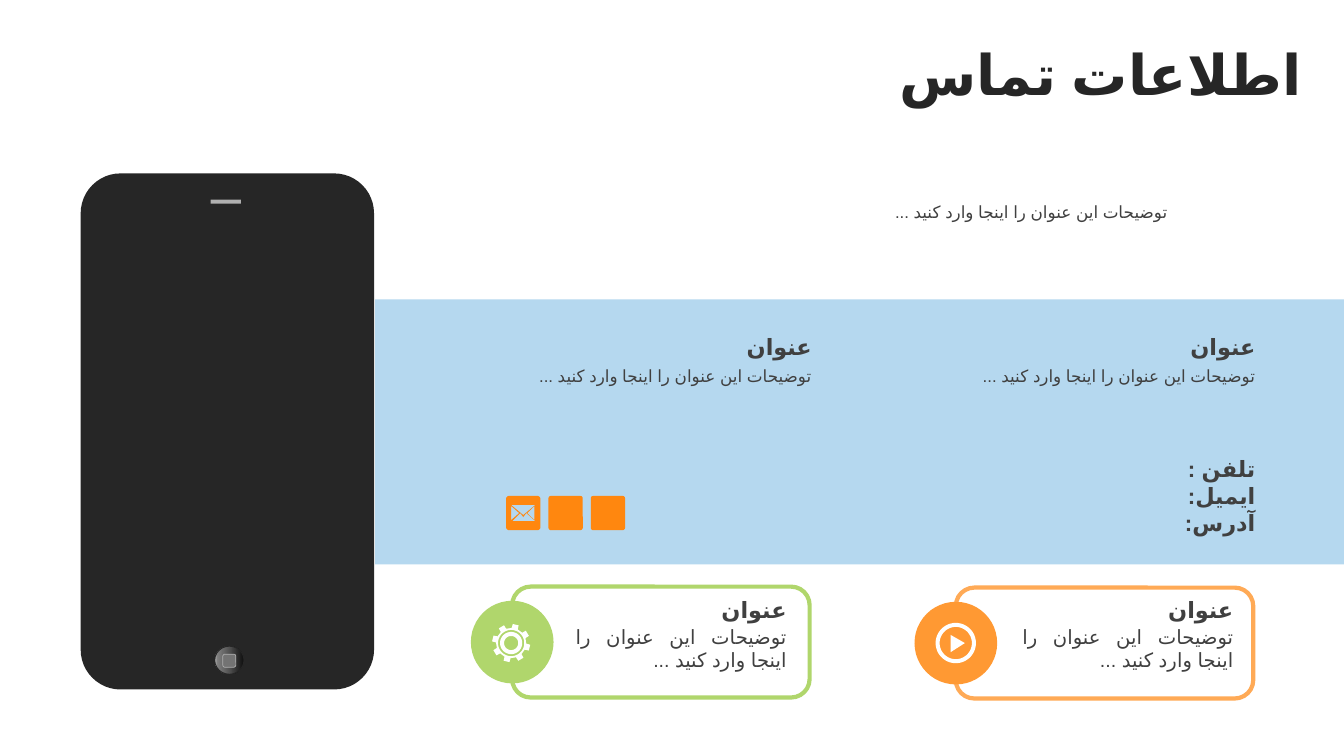
"""Build the Persian contact information slide."""
from dataclasses import dataclass
from math import cos, radians, sin

from lxml import etree
from pptx import Presentation
from pptx.dml.color import RGBColor
from pptx.enum import shapes, text
from pptx.oxml import ns
from pptx.util import Inches, Pt

RECT = shapes.MSO_SHAPE.RECTANGLE
ROUND = shapes.MSO_SHAPE.ROUNDED_RECTANGLE
OVAL = shapes.MSO_SHAPE.OVAL
RIGHT = text.PP_ALIGN.RIGHT
JUSTIFY = text.PP_ALIGN.JUSTIFY
MIDDLE = text.MSO_ANCHOR.MIDDLE
TOP = text.MSO_ANCHOR.TOP

INK, DARK, SILVER, WHITE = "404040", "262626", "B0B0B0", "FFFFFF"
ORANGE, GREEN = "FF870F", "B0D66C"
HEADING = "عنوان"
DETAILS = "توضیحات این عنوان را اینجا وارد کنید ..."


def color(value):
    return RGBColor.from_string(value)


def polar(cx, cy, radius, degrees):
    angle = radians(degrees)
    return cx + radius * cos(angle), cy + radius * sin(angle)


def circle(cx, cy, radius):
    return [polar(cx, cy, radius, a) for a in range(0, 360, 6)]


def gear(cx, cy, root, tip, teeth, turn):
    outline = []
    for tooth in range(teeth):
        middle = turn + tooth * 360 / teeth
        for radius, offset in ((root, -12), (tip, -9), (tip, 9), (root, 12)):
            outline.append(polar(cx, cy, radius, middle + offset))
    return outline


def rounded_square(left, top, side, radius):
    near, far = radius, side - radius
    corners = ((far, far), (near, far), (near, near), (far, near))
    return [polar(left + x, top + y, radius, 90 * quarter + step)
            for quarter, (x, y) in enumerate(corners)
            for step in range(0, 91, 15)]


@dataclass
class Canvas:
    slide: object
    font: str = "Arial"
    language: str = "fa-IR"

    def paint(self, fill, value, alpha=100):
        fill.solid()
        fill.fore_color.rgb = color(value)
        if alpha < 100:
            tint = fill._xPr.find(".//" + ns.qn("a:srgbClr"))
            etree.SubElement(tint, ns.qn("a:alpha"), val=str(alpha * 1000))

    def finish(self, shape, fill, line, width, fill_alpha=100, line_alpha=100):
        shape.shadow.inherit = False
        if fill:
            self.paint(shape.fill, fill, fill_alpha)
        else:
            shape.fill.background()
        if line:
            self.paint(shape.line.fill, line, line_alpha)
            shape.line.width = Pt(width)
        else:
            shape.line.fill.background()
        return shape

    def shape(self, kind, box, fill=None, line=None, width=0, corner=None, **alphas):
        shape = self.slide.shapes.add_shape(kind, *map(Inches, box))
        if corner is not None:
            shape.adjustments[0] = corner
        return self.finish(shape, fill, line, width, **alphas)

    def gradient(self, shape, stops, angle):
        shape.fill.gradient()
        shape.fill.gradient_angle = angle
        stop_list = shape.element.spPr.find(".//" + ns.qn("a:gsLst"))
        stop_list.clear()
        for position, value in stops:
            stop = etree.SubElement(stop_list, ns.qn("a:gs"), pos=str(position * 1000))
            etree.SubElement(stop, ns.qn("a:srgbClr"), val=value)

    def icon(self, contours, fill):
        builder = None
        for contour in contours:
            points = [(Inches(x), Inches(y)) for x, y in contour]
            if builder is None:
                builder = self.slide.shapes.build_freeform(*points[0])
            else:
                builder.move_to(*points[0])
            builder.add_line_segments(points[1:], close=True)
        return self.finish(builder.convert_to_shape(), fill, None, 0)

    def text(self, box, lines, size, bold=False, align=RIGHT, anchor=TOP,
             ink=INK, grow=True):
        frame = self.slide.shapes.add_textbox(*map(Inches, box)).text_frame
        frame.word_wrap = True
        frame.vertical_anchor = anchor
        if grow:
            frame.auto_size = text.MSO_AUTO_SIZE.SHAPE_TO_FIT_TEXT
        for number, line in enumerate(lines):
            paragraph = frame.add_paragraph() if number else frame.paragraphs[0]
            paragraph.alignment = align
            paragraph._p.get_or_add_pPr().set("rtl", "1")
            run = paragraph.add_run()
            run.text = line
            run.font.size = Pt(size)
            run.font.bold = bold
            run.font.name = self.font
            run.font.color.rgb = color(ink)
            run.font._element.set("lang", self.language)
            etree.SubElement(run.font._element, ns.qn("a:cs"), typeface=self.font)
        return frame

    def entry(self, left, top, width, gap, height, size):
        self.text((left, top, width, 0.37), [HEADING], 16, True, anchor=MIDDLE)
        self.text((left, top + gap, width, height), [DETAILS], size, align=JUSTIFY)


def draw_phone(canvas):
    canvas.shape(ROUND, (0.8, 1.72, 2.91, 5.12), DARK, corner=0.136)
    canvas.shape(RECT, (2.09, 1.98, 0.3, 0.04), SILVER)
    button = canvas.shape(OVAL, (2.13, 6.41, 0.29, 0.28), DARK, DARK)
    canvas.gradient(button, ((0, "0F0F0F"), (56, "595959"),
                             (91, "808080"), (100, "BFBFBF")), 180)
    canvas.shape(ROUND, (2.21, 6.49, 0.13, 0.13), "737373", SILVER, 0.5)


def draw_cards(canvas):
    cards = ((9.48, 5.83, 10.04, ORANGE, "FF9933", 70),
             (5.08, 5.82, 5.61, GREEN, GREEN, 100))
    for left, top, text_left, border, badge, alpha in cards:
        canvas.shape(ROUND, (left, top, 2.95, 1.1), None, border, 3, line_alpha=alpha)
        canvas.shape(OVAL, (left - 0.41, top + 0.14, 0.82, 0.82), badge)
        canvas.entry(text_left, 5.86, 2.29, 0.29, 0.57, 14)
    play = [(9.43, 6.3), (9.57, 6.38), (9.43, 6.47)]
    canvas.icon([play, circle(9.48, 6.38, 0.16), circle(9.48, 6.38, 0.2)], WHITE)
    hub = (5.07, 6.38)
    rings = [circle(*hub, radius) for radius in (0.07, 0.11, 0.13)]
    canvas.icon(rings + [gear(*hub, 0.15, 0.19, 8, -76)], WHITE)


def draw_contacts(canvas):
    canvas.text((7.79, 4.47, 4.76, 0.91), ["تلفن :", "ایمیل:", "آدرس:"], 16, True)
    side, top = 0.34, 4.92
    mail, *networks = [5.02 + 0.42 * place for place in range(3)]
    for left in networks:
        canvas.shape(ROUND, (left, top, side, side), ORANGE, corner=0.07)
    canvas.icon([
        rounded_square(mail, top, side, 0.03),
        [(5.22, 5.09), (5.19, 5.13), (5.16, 5.09), (5.08, 5.17), (5.31, 5.17)],
        [(5.3, 5.02), (5.23, 5.09), (5.3, 5.16)],
        [(5.07, 5.02), (5.07, 5.16), (5.15, 5.09)],
        [(5.07, 5.01), (5.19, 5.11), (5.31, 5.01)],
    ], ORANGE)


def main():
    deck = Presentation()
    deck.slide_width, deck.slide_height = Inches(13.33), Inches(7.5)
    canvas = Canvas(deck.slides.add_slide(deck.slide_layouts[6]))
    canvas.shape(RECT, (3.72, 2.97, 9.61, 2.63), "96C8E9", fill_alpha=70)
    draw_phone(canvas)
    title = canvas.text((0.35, 0.37, 12.66, 0.79), ["اطلاعات تماس"], 40, True,
                        anchor=MIDDLE, ink=DARK, grow=False)
    title.paragraphs[0].line_spacing = 0.9
    title.paragraphs[0].space_before = Pt(10)
    canvas.text((4.64, 1.95, 7.04, 0.3), [DETAILS], 12, align=JUSTIFY)
    for left in (4.57, 8.97):
        canvas.entry(left, 3.25, 3.58, 0.33, 0.3, 12)
    draw_cards(canvas)
    draw_contacts(canvas)
    deck.save("out.pptx")


if __name__ == "__main__":
    main()
